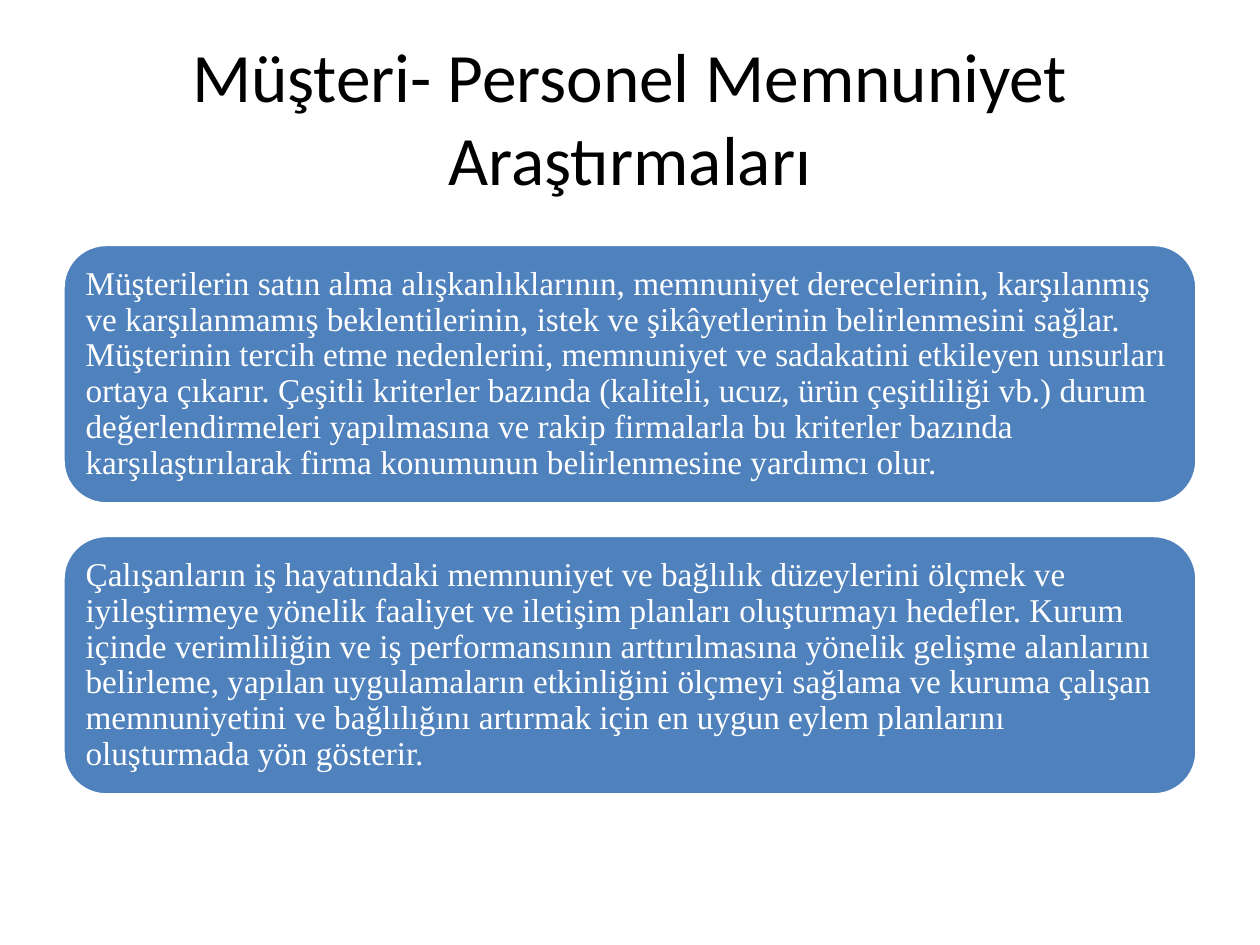
from dataclasses import dataclass

from pptx import Presentation
from pptx.dml.color import RGBColor
from pptx.enum.shapes import MSO_SHAPE
from pptx.enum.text import MSO_ANCHOR, MSO_AUTO_SIZE, PP_ALIGN
from pptx.slide import Slide
from pptx.text.text import TextFrame
from pptx.util import Inches, Pt

ROUNDED = MSO_SHAPE.ROUNDED_RECTANGLE
MIDDLE = MSO_ANCHOR.MIDDLE
NO_FIT = MSO_AUTO_SIZE.NONE
LEFT, CENTER = PP_ALIGN.LEFT, PP_ALIGN.CENTER
TITLE_ONLY = 5


@dataclass(frozen=True)
class Theme:
    title_font: str = "Calibri"
    body_font: str = "Times New Roman"
    title_size: float = 39.6
    body_size: float = 19
    line_width: float = 2
    ink: RGBColor = RGBColor(0x00, 0x00, 0x00)
    panel: RGBColor = RGBColor(0x4F, 0x81, 0xBD)
    paper: RGBColor = RGBColor(0xFF, 0xFF, 0xFF)


@dataclass(frozen=True)
class Grid:
    """One column of equal rows, in inches."""
    left: float = 0.5
    top: float = 1.94
    width: float = 9
    row_height: float = 2.06
    gap: float = 0.25

    def row_top(self, row: int) -> float:
        return self.top + row * (self.row_height + self.gap)


@dataclass(frozen=True)
class Panel:
    row: int
    text: str


THEME = Theme()
GRID = Grid()
TITLE = "Müşteri- Personel Memnuniyet Araştırmaları"
PANELS = [
    Panel(0, "Müşterilerin satın alma alışkanlıklarının, memnuniyet derecelerinin, "
             "karşılanmış ve karşılanmamış beklentilerinin, istek ve şikâyetlerinin "
             "belirlenmesini sağlar. Müşterinin tercih etme nedenlerini, memnuniyet ve "
             "sadakatini etkileyen unsurları ortaya çıkarır. Çeşitli kriterler bazında "
             "(kaliteli, ucuz, ürün çeşitliliği vb.) durum değerlendirmeleri yapılmasına "
             "ve rakip firmalarla bu kriterler bazında karşılaştırılarak firma konumunun "
             "belirlenmesine yardımcı olur."),
    Panel(1, "Çalışanların iş hayatındaki memnuniyet ve bağlılık düzeylerini ölçmek ve "
             "iyileştirmeye yönelik faaliyet ve iletişim planları oluşturmayı hedefler. "
             "Kurum içinde verimliliğin ve iş performansının arttırılmasına yönelik "
             "gelişme alanlarını belirleme, yapılan uygulamaların etkinliğini ölçmeyi "
             "sağlama ve kuruma çalışan memnuniyetini ve bağlılığını artırmak için en "
             "uygun eylem planlarını oluşturmada yön gösterir."),
]


def write(frame: TextFrame, text: str, font: str, size: float,
          color: RGBColor, align: PP_ALIGN, spacing: float) -> None:
    frame.word_wrap = True
    frame.auto_size = NO_FIT
    frame.vertical_anchor = MIDDLE
    para = frame.paragraphs[0]
    para.alignment = align
    para.line_spacing = spacing
    span = para.add_run()
    span.text = text
    span.font.name = font
    span.font.size = Pt(size)
    span.font.color.rgb = color


def draw_title(page: Slide) -> None:
    box = page.shapes.title
    box.left, box.top = Inches(GRID.left), Inches(0.3)
    box.width, box.height = Inches(GRID.width), Inches(1.25)
    write(box.text_frame, TITLE, THEME.title_font, THEME.title_size,
          THEME.ink, CENTER, 1.0)


def draw_panel(page: Slide, panel: Panel) -> None:
    box = page.shapes.add_shape(
        ROUNDED, Inches(GRID.left), Inches(GRID.row_top(panel.row)),
        Inches(GRID.width), Inches(GRID.row_height))
    box.shadow.inherit = False
    box.fill.solid()
    box.fill.fore_color.rgb = THEME.panel
    box.line.color.rgb = THEME.paper
    box.line.width = Pt(THEME.line_width)
    frame = box.text_frame
    frame.margin_left = frame.margin_right = Inches(0.08)
    frame.margin_top = frame.margin_bottom = Inches(0.08)
    write(frame, panel.text, THEME.body_font, THEME.body_size,
          THEME.paper, LEFT, 0.9)


def main() -> None:
    deck = Presentation()
    deck.slide_width, deck.slide_height = Inches(10), Inches(7.5)
    page = deck.slides.add_slide(deck.slide_layouts[TITLE_ONLY])
    page.background.fill.solid()
    page.background.fill.fore_color.rgb = THEME.paper

    # Heading
    draw_title(page)

    # Stacked text panels
    for panel in PANELS:
        draw_panel(page, panel)

    deck.save("out.pptx")


if __name__ == "__main__":
    main()
